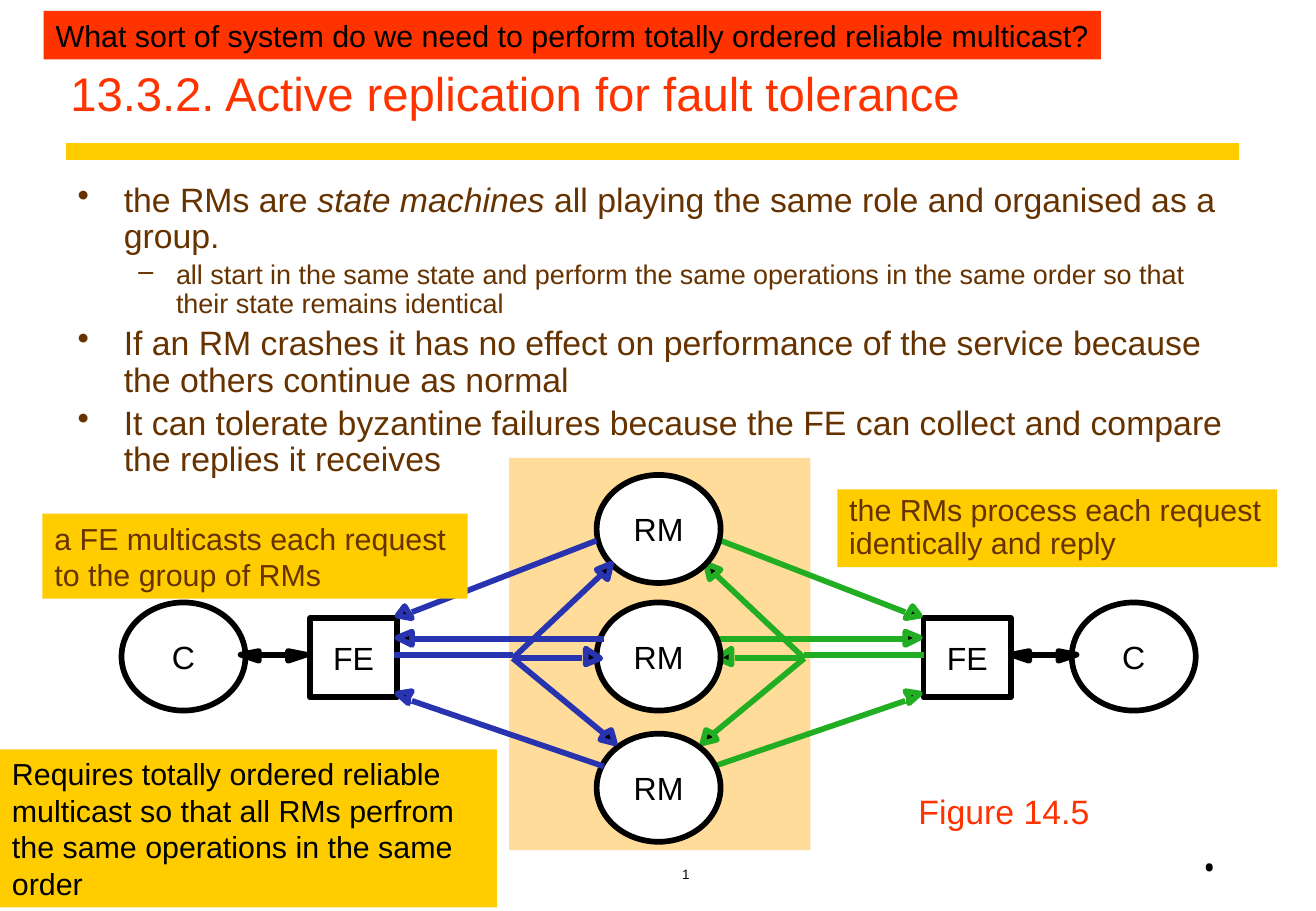
from dataclasses import dataclass

from lxml import etree
from pptx import Presentation
from pptx.dml.color import RGBColor
from pptx.enum.shapes import MSO_CONNECTOR, MSO_SHAPE as SHAPE
from pptx.enum.text import MSO_ANCHOR as ANCHOR, PP_ALIGN as ALIGN
from pptx.oxml.ns import qn
from pptx.util import Inches, Pt


@dataclass(frozen=True)
class Theme:
    red: str = "FF3300"
    gold: str = "FFCC00"
    brown: str = "663300"
    peach: str = "FFDC99"
    black: str = "000000"
    white: str = "FFFFFF"
    green: str = "22AE22"
    blue: str = "2833B0"
    font: str = "Arial"
    dot_font: str = "Cambria"
    title: int = 28
    dot: int = 24
    body: int = 20
    node: int = 19
    callout: int = 18
    sub: int = 16
    number: int = 8
    stroke: float = 3.38
    rule: float = 10


T = Theme()
MIRROR = 10.84  # left x + right x of the two halves of the diagram

prs = Presentation()
prs.slide_width, prs.slide_height = Inches(10.83), Inches(7.5)
s = prs.slides.add_slide(prs.slide_layouts[6])


def add_box(kind, at, text="", size=T.callout, color=T.black, fill=None, line=None,
            align=ALIGN.LEFT, anchor=ANCHOR.TOP, wrap=True, spacing=None, inset=None, font=T.font):
    """Add a preset shape, or a text box when kind is None."""
    at = [Inches(v) for v in at]
    if kind is None:
        sp = s.shapes.add_textbox(*at)
    else:
        sp = s.shapes.add_shape(kind, *at)
        sp.shadow.inherit = False
        sp.fill.background()
        sp.line.fill.background()
    if fill:
        sp.fill.solid()
        sp.fill.fore_color.rgb = RGBColor.from_string(fill)
    if line:
        sp.line.color.rgb = RGBColor.from_string(line)
        sp.line.width = Pt(T.stroke)
    tf = sp.text_frame
    tf.word_wrap, tf.vertical_anchor = wrap, anchor
    if inset is not None:
        tf.margin_left = tf.margin_right = tf.margin_top = tf.margin_bottom = Inches(inset)
    p = tf.paragraphs[0]
    p.text, p.alignment, p.line_spacing = text, align, spacing
    p.font.name, p.font.size = font, Pt(size)
    p.font.color.rgb = RGBColor.from_string(color)
    return tf


def add_arrows(arrows, color, mirrored=False, width=T.stroke):
    """Draw each (start, end, head outline); mirrored flips to the right half."""
    for start, end, head in arrows:
        points = [(Inches(MIRROR - x if mirrored else x), Inches(y)) for x, y in (start, end, *head)]
        if head:
            outline = s.shapes.build_freeform(*points[2], scale=1.0)
            outline.add_line_segments(points[3:], close=True)
            sp = outline.convert_to_shape()
            sp.shadow.inherit = False
            sp.fill.solid()
            sp.fill.fore_color.rgb = RGBColor.from_string(T.black)
            sp.line.color.rgb = RGBColor.from_string(color)
            sp.line.width = Pt(width)
        c = s.shapes.add_connector(MSO_CONNECTOR.STRAIGHT, *points[0], *points[1])
        c.line.color.rgb = RGBColor.from_string(color)
        c.line.width = Pt(width)
        etree.SubElement(c._element.spPr, qn("a:effectLst"))


# Rule, slide number and title
add_arrows([((0.54, 1.25), (10.2, 1.25), [])], T.gold, width=T.rule)
add_box(None, (2.35, 7, 6.59, 0.31), "1", T.number, align=ALIGN.CENTER, anchor=ANCHOR.BOTTOM)
add_box(None, (0.48, 0.25, 9.72, 0.8), "13.3.2. Active replication for fault tolerance",
        T.title, T.red, anchor=ANCHOR.BOTTOM, spacing=0.9)

# Bullets: level, runs (every second run is italic)
bullets = [
    (0, ["the RMs are ", "state machines", " all playing the same role and organised as a group."]),
    (1, ["all start in the same state and perform the same operations in the same order "
         "so that their state remains identical"]),
    (0, ["If an RM crashes it has no effect on performance of the service because "
         "the others continue as normal"]),
    (0, ["It can tolerate byzantine failures because the FE can collect and compare "
         "the replies it receives"]),
]
levels = [("•", 0.38, 0.38, T.body), ("–", 0.81, 0.31, T.sub)]
tf = add_box(None, (0.54, 1.46, 9.69, 2.03))
for i, (level, runs) in enumerate(bullets):
    mark, margin, hanging, size = levels[level]
    p = tf.add_paragraph() if i else tf.paragraphs[0]
    p.level, p.line_spacing, p.space_before = level, 0.9, Pt(0.2 * size)
    p.font.name, p.font.size = T.font, Pt(size)
    p.font.color.rgb = RGBColor.from_string(T.brown)
    for j, text in enumerate(runs):
        r = p.add_run()
        r.text = text
        if j % 2:
            r.font.italic = True
    pPr = p._p.get_or_add_pPr()
    pPr.set("marL", str(Inches(margin)))
    pPr.set("indent", str(-Inches(hanging)))
    bullet = etree.Element(qn("a:buChar"), char=mark)
    pPr.find(qn("a:defRPr")).addprevious(bullet)

# Group panel, clients and front ends
node = dict(size=T.node, line=T.black, align=ALIGN.CENTER, anchor=ANCHOR.MIDDLE, wrap=False, inset=0)
add_box(SHAPE.RECTANGLE, (4.19, 3.77, 2.48, 3.23), fill=T.peach)
for client_x, front_end_x in [(1, 2.55), (8.82, 7.6)]:
    add_box(SHAPE.OVAL, (client_x, 4.96, 1.02, 0.89), "C", **node)
    add_box(SHAPE.RECTANGLE, (front_end_x, 5.09, 0.72, 0.65), "FE", **node)

# Arrows of the left half
client_link = [
    ((2.13, 5.39), (2.37, 5.39), [(2.37, 5.36), (2.52, 5.39), (2.37, 5.44)]),
    ((2.37, 5.39), (2.13, 5.39), [(2.13, 5.44), (1.98, 5.39), (2.13, 5.36)]),
]
replies = [
    ((4.91, 4.45), (3.39, 5.04), [(3.36, 5.04), (3.39, 5.09), (3.27, 5.07), (3.33, 4.99)]),
    ((4.97, 6.31), (3.39, 5.77), [(3.36, 5.74), (3.36, 5.79), (3.27, 5.71), (3.39, 5.69)]),
    ((4.97, 5.26), (3.39, 5.26), [(3.39, 5.31), (3.27, 5.25), (3.39, 5.2)]),
]
requests = [
    ((3.24, 5.39), (4.22, 5.39), []),
    ((4.22, 5.42), (4.94, 4.74), [(4.94, 4.72), (4.91, 4.69), (5.03, 4.64), (5, 4.77)]),
    ((4.25, 5.42), (4.79, 5.42), [(4.82, 5.34), (4.94, 5.42), (4.82, 5.47)]),
    ((4.22, 5.42), (4.97, 6.04), [(4.97, 6.04), (5.03, 6.01), (5.06, 6.12), (4.94, 6.09)]),
]

# Right arrows lie behind the replica managers, left arrows in front
add_arrows(client_link, T.black)
add_arrows(client_link, T.black, mirrored=True)
add_arrows(replies + requests, T.green, mirrored=True)
for y in (3.91, 4.96, 6.04):
    add_box(SHAPE.OVAL, (4.91, y, 1.02, 0.89), "RM", fill=T.white, **node)
add_arrows(replies + requests, T.blue)

# Figure label and corner dot
add_box(None, (7.46, 6.46, 1.61, 0.43), "Figure 14.5", T.body, T.red, wrap=False)
add_box(None, (9.78, 6.86, 0.32, 0.5), "•", T.dot, wrap=False, font=T.dot_font)

# Callouts
add_box(SHAPE.RECTANGLE, (0.35, 4.23, 3.5, 0.7), "a FE multicasts each request to the group of RMs",
        color=T.brown, fill=T.gold)
add_box(SHAPE.RECTANGLE, (6.89, 4.03, 3.62, 0.64), "the RMs process each request identically and reply",
        color=T.brown, fill=T.gold, spacing=0.9)
add_box(SHAPE.RECTANGLE, (0, 6.17, 4.09, 1.3), "Requires totally ordered reliable multicast so that all RMs "
        "perfrom the same operations in the same order", fill=T.gold)
add_box(SHAPE.RECTANGLE, (0.36, 0.09, 8.7, 0.4), "What sort of system do we need to perform totally ordered "
        "reliable multicast?", fill=T.red, wrap=False)

prs.save("out.pptx")
